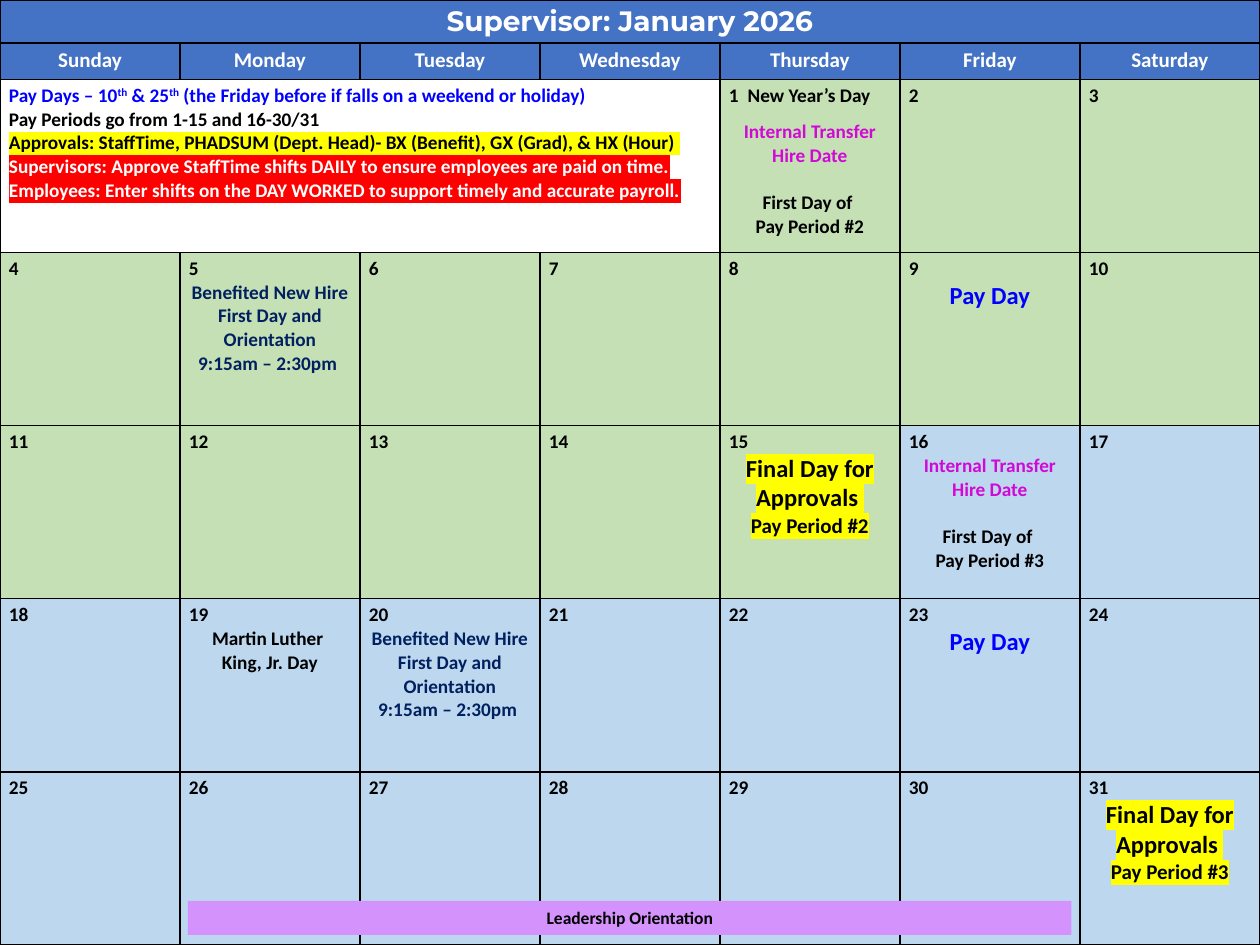
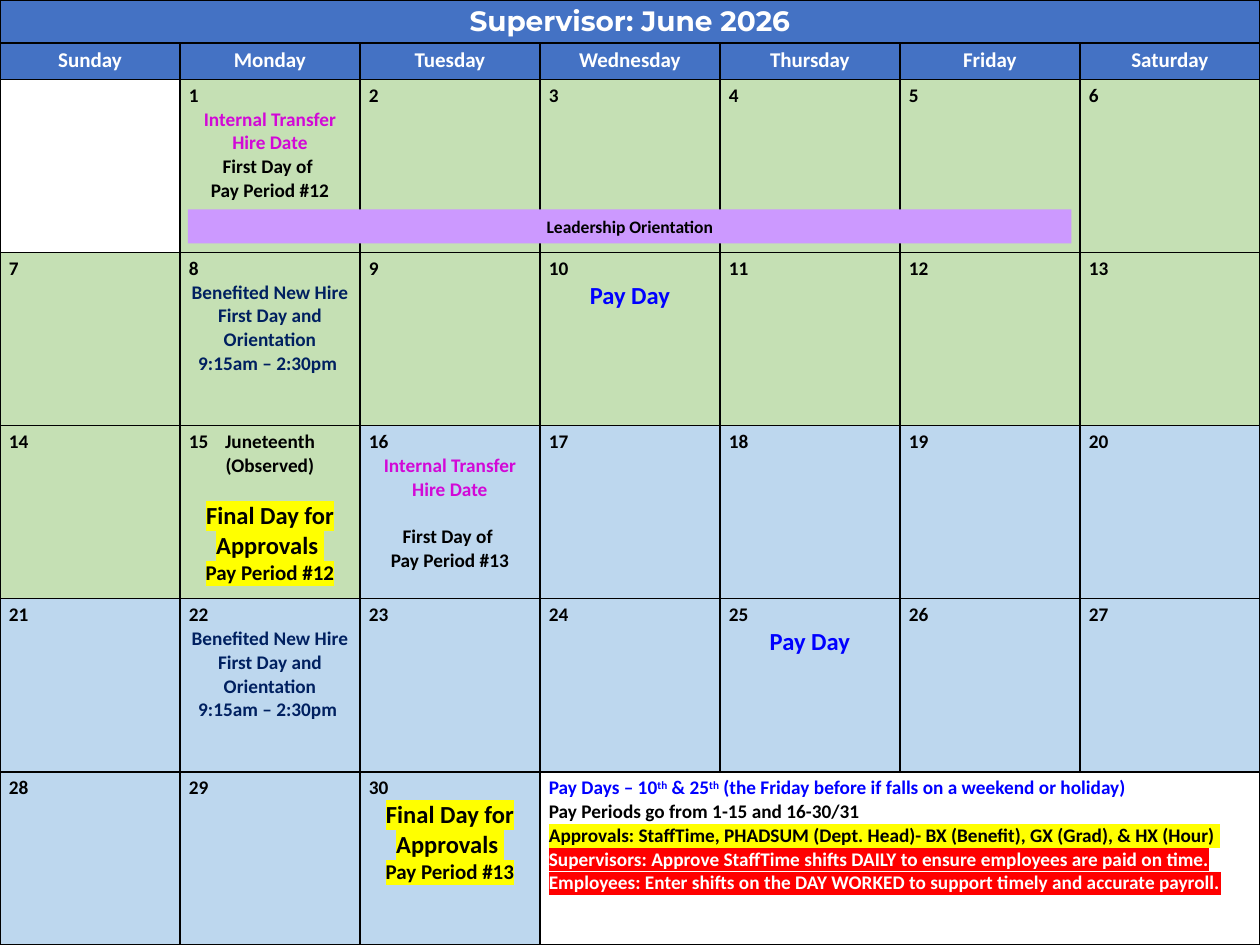
"""Build the supervisor payroll calendar slides for January and June 2026."""
import pptx
import pptx.chart.data
import pptx.dml.color
import pptx.enum.shapes
import pptx.enum.text
import pptx.oxml
import pptx.oxml.ns
import pptx.util
from lxml import etree

Cm, Pt = pptx.util.Cm, pptx.util.Pt
RGB = pptx.dml.color.RGBColor.from_string
qn = pptx.oxml.ns.qn
LEFT, CENTER = pptx.enum.text.PP_ALIGN.LEFT, pptx.enum.text.PP_ALIGN.CENTER

COLORS = {
    "header": "4472C4", "first_half": "C5E0B4", "second_half": "BDD7EE",
    "white": "FFFFFF", "black": "000000", "blue": "0000FF", "navy": "002060",
    "magenta": "D208D7", "yellow": "FFFF00", "red": "FF0000",
}
STYLES = {
    "title": {"size": 16, "name": "Montserrat", "color": "white", "align": CENTER},
    "weekday": {"size": 12, "color": "white", "align": CENTER},
    "date": {},
    "event": {"align": CENTER},
    "transfer": {"color": "magenta", "align": CENTER},
    "new_hire": {"color": "navy", "align": CENTER},
    "pay_day": {"size": 14, "color": "blue", "align": CENTER},
    "final_day": {"size": 14, "highlight": "yellow", "align": CENTER},
    "final_period": {"size": 12, "highlight": "yellow", "align": CENTER},
    "pay_note": {"color": "blue"},
    "approval_note": {"highlight": "yellow"},
    "urgent_note": {"color": "white", "highlight": "red"},
    "bar": {"size": 10, "align": CENTER},
}
WEEKDAYS = ["Sunday", "Monday", "Tuesday", "Wednesday", "Thursday", "Friday", "Saturday"]
NOTES = [
    ("Pay Days – 10^th^ & 25^th^ (the Friday before if falls on a weekend or holiday)", "pay_note"),
    ("Pay Periods go from 1-15 and 16-30/31", "date"),
    ("Approvals: StaffTime, PHADSUM (Dept. Head)- BX (Benefit), GX (Grad), & HX (Hour) ",
     "approval_note"),
    ("Supervisors: Approve StaffTime shifts DAILY to ensure employees are paid on time.",
     "urgent_note"),
    ("Employees: Enter shifts on the DAY WORKED to support timely and accurate payroll.",
     "urgent_note"),
]
EVENTS = {
    "start": [("Internal Transfer Hire Date", "transfer"), ("First Day of ", "event"),
              ("Pay Period #{}", "event")],
    "final": [("Final Day for Approvals ", "final_day"), ("Pay Period #{}", "final_period")],
    "new_hire": [("Benefited New Hire First Day and Orientation", "new_hire"),
                 ("9:15am – 2:30pm ", "new_hire")],
    "pay": [("Pay Day", "pay_day")],
    "king": [("Martin Luther ", "event"), ("King, Jr. Day", "event")],
    "observed": [("(Observed)", "event")],
}
LINE, HALF_LINE = 13.4, 7.3
NEW_HIRE, PAY = [("new_hire", "", {})], [("pay", "", {})]
MONTHS = [
    {"title": "Supervisor: January 2026", "days": 31, "offset": 4, "notes": (2, 0),
     "bar_top": 18.16, "bar_color": "D492FC", "holidays": {1: ("New Year’s Day", 0.38)},
     "events": {1: [("start", 2, {0: HALF_LINE, 1: LINE})], 5: NEW_HIRE, 9: PAY,
                15: [("final", 2, {})], 16: [("start", 3, {1: LINE})],
                19: [("king", "", {})], 20: NEW_HIRE, 23: PAY, 31: [("final", 3, {})]}},
    {"title": "Supervisor: June 2026", "days": 30, "offset": 1, "notes": (6, 3),
     "bar_top": 4.22, "bar_color": "CC99FF", "holidays": {15: ("Juneteenth", 0.73)},
     "events": {1: [("start", 12, {})], 8: NEW_HIRE, 10: PAY,
                15: [("observed", "", {}), ("final", 12, {0: LINE})],
                16: [("start", 13, {1: LINE})], 22: NEW_HIRE, 25: PAY,
                30: [("final", 13, {})]}},
]


def write(tf, lines):
    for i, (text, style, *gap) in enumerate(lines):
        fmt = {"size": 11, "name": "Calibri", "color": "black", "align": LEFT} | STYLES[style]
        p = tf.paragraphs[0] if i == 0 else tf.add_paragraph()
        p.alignment = fmt["align"]
        if gap and gap[0]:
            p.space_before = Pt(gap[0])
        for j, part in enumerate(text.split("^")):
            r = p.add_run()
            r.text = part
            for key, value in {"size": Pt(fmt["size"]), "name": fmt["name"], "bold": True}.items():
                setattr(r.font, key, value)
            r.font.color.rgb = RGB(COLORS[fmt["color"]])
            rPr = r._r.get_or_add_rPr()
            if j % 2:
                rPr.set("baseline", "30000")
            if "highlight" in fmt:
                hl = etree.Element(qn("a:highlight"))
                etree.SubElement(hl, qn("a:srgbClr"), val=COLORS[fmt["highlight"]])
                rPr.find(qn("a:solidFill")).addnext(hl)


def paint(cell, color):
    margins = {"margin_left": 0.18, "margin_right": 0.18, "margin_top": 0.09, "margin_bottom": 0.09}
    for key, value in margins.items():
        setattr(cell, key, Cm(value))
    tcPr = cell._tc.get_or_add_tcPr()
    for side in ("lnL", "lnR", "lnT", "lnB"):
        ln = etree.SubElement(tcPr, qn(f"a:{side}"), w=str(Pt(1)))
        fill = etree.SubElement(ln, qn("a:solidFill"))
        etree.SubElement(fill, qn("a:srgbClr"), val=COLORS["black"])
    cell.fill.solid()
    cell.fill.fore_color.rgb = RGB(COLORS[color])


prs = pptx.Presentation()
prs.slide_width, prs.slide_height = Cm(25.4), Cm(19.05)

for month in MONTHS:
    s = prs.slides.add_slide(prs.slide_layouts[6])
    tbl = s.shapes.add_table(7, 7, 0, 0, prs.slide_width, prs.slide_height).table
    tbl.first_row = tbl.horz_banding = False
    for col in tbl.columns:
        col.width = prs.slide_width // 7
    for row, height in zip(tbl.rows, [0.87, 0.73] + [3.49] * 5):
        row.height = Cm(height)

    for row in range(7):
        for col in range(7):
            day = (row - 2) * 7 + col - month["offset"] + 1
            if row < 2:
                color = "header"
            elif not 1 <= day <= month["days"]:
                color = "white"
            else:
                color = "first_half" if day <= 15 else "second_half"
            paint(tbl.cell(row, col), color)

    tbl.cell(0, 0).merge(tbl.cell(0, 6))
    write(tbl.cell(0, 0).text_frame, [(month["title"], "title")])
    for col, weekday in enumerate(WEEKDAYS):
        write(tbl.cell(1, col).text_frame, [(weekday, "weekday")])

    row, col = month["notes"]
    tbl.cell(row, col).merge(tbl.cell(row, col + 3))
    write(tbl.cell(row, col).text_frame, NOTES)

    for day in range(1, month["days"] + 1):
        row, col = divmod(day - 1 + month["offset"], 7)
        tf = tbl.cell(row + 2, col).text_frame
        label = str(day)
        if day in month["holidays"]:
            holiday, tab = month["holidays"][day]
            label += "\t" + holiday
            tabs = etree.SubElement(tf.paragraphs[0]._p.get_or_add_pPr(), qn("a:tabLst"))
            etree.SubElement(tabs, qn("a:tab"), pos=str(Cm(tab)), algn="l")
        lines = [(label, "date")]
        for kind, period, gaps in month["events"].get(day, []):
            for i, (text, style) in enumerate(EVENTS[kind]):
                lines.append((text.format(period), style, gaps.get(i, 0)))
        write(tf, lines)

    bar = s.shapes.add_shape(pptx.enum.shapes.MSO_SHAPE.RECTANGLE, Cm(3.79),
                             Cm(month["bar_top"]), Cm(17.81), Cm(0.69))
    bar.shadow.inherit = False
    bar.fill.solid()
    bar.fill.fore_color.rgb = RGB(month["bar_color"])
    bar.line.fill.background()
    write(bar.text_frame, [("Leadership Orientation", "bar")])

prs.save("out.pptx")
